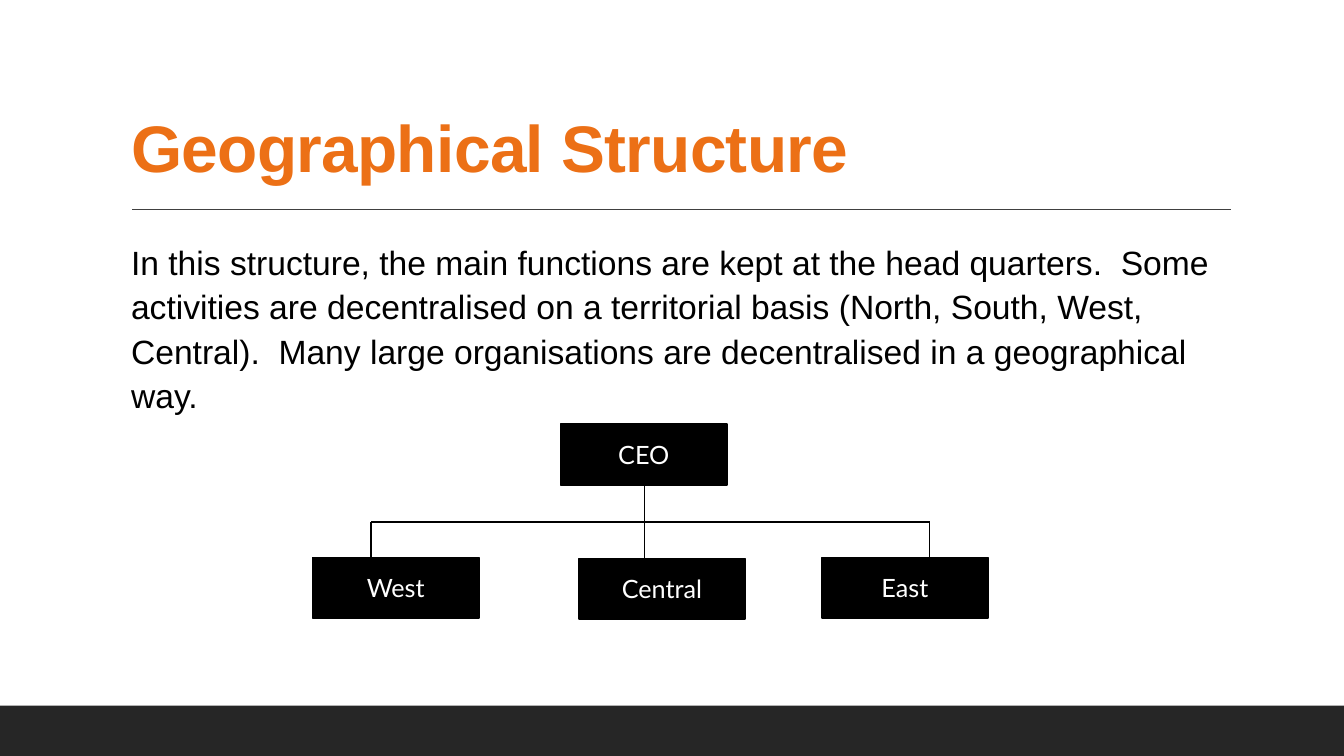
from lxml import etree
from pptx import Presentation
from pptx.dml.color import RGBColor
from pptx.enum.shapes import MSO_CONNECTOR, MSO_SHAPE
from pptx.enum.text import MSO_ANCHOR, MSO_AUTO_SIZE, PP_ALIGN
from pptx.oxml.ns import qn
from pptx.util import Inches, Pt

RECTANGLE = MSO_SHAPE.RECTANGLE
STRAIGHT = MSO_CONNECTOR.STRAIGHT
LEFT, CENTER = PP_ALIGN.LEFT, PP_ALIGN.CENTER
TOP, MIDDLE, BOTTOM = MSO_ANCHOR.TOP, MSO_ANCHOR.MIDDLE, MSO_ANCHOR.BOTTOM
NO_AUTOFIT = MSO_AUTO_SIZE.NONE

COLORS = {
    "accent": "EC7016",
    "text": "000000",
    "box": "000000",
    "label": "FFFFFF",
    "rule": "404040",
    "footer": "262626",
}
HEADING_FONT, LABEL_FONT = "Arial", "Lato"
COLUMNS, ROWS = 133.3, 75


class SlideBuilder:
    def __init__(self, presentation):
        self.column = presentation.slide_width / COLUMNS
        self.row = presentation.slide_height / ROWS
        self.slide = presentation.slides.add_slide(presentation.slide_layouts[1])

    def point(self, column, row):
        return round(column * self.column), round(row * self.row)

    def color(self, name):
        return RGBColor.from_string(COLORS[name])

    def place(self, shape, column, row, width, height):
        shape.left, shape.top = self.point(column, row)
        shape.width, shape.height = self.point(width, height)

    def set_text(self, shape, text, font, size, color, anchor, align, bold=False):
        frame = shape.text_frame
        frame.word_wrap = True
        frame.auto_size = NO_AUTOFIT
        frame.vertical_anchor = anchor
        paragraph = frame.paragraphs[0]
        paragraph.alignment = align
        run = paragraph.add_run()
        run.text = text
        run.font.name = font
        run.font.size = Pt(size)
        run.font.bold = bold
        run.font.color.rgb = self.color(color)
        return paragraph

    def title(self, text, *area):
        shape = self.slide.shapes.title
        self.place(shape, *area)
        paragraph = self.set_text(shape, text, HEADING_FONT, 47, "accent", BOTTOM, LEFT, True)
        paragraph.line_spacing = 0.9
        paragraph.runs[0].font._element.set("spc", "-50")

    def body(self, text, *area):
        shape = self.slide.placeholders[1]
        self.place(shape, *area)
        shape.text_frame.margin_left = shape.text_frame.margin_right = 0
        paragraph = self.set_text(shape, text, HEADING_FONT, 24, "text", TOP, LEFT)
        paragraph.line_spacing = 1.1
        paragraph.space_before, paragraph.space_after = Pt(12), Pt(2)
        properties = paragraph._p.get_or_add_pPr()
        properties.set("marL", str(Inches(0.1)))
        properties.set("indent", "0")
        etree.SubElement(properties, qn("a:buNone"))

    def rectangle(self, color, column, row, width, height):
        shape = self.slide.shapes.add_shape(
            RECTANGLE, *self.point(column, row), *self.point(width, height)
        )
        shape.shadow.inherit = False
        shape.fill.solid()
        shape.fill.fore_color.rgb = self.color(color)
        shape.line.fill.background()
        return shape

    def box(self, text, column, row):
        shape = self.rectangle("box", column, row, 16.5, 6)
        shape.line.color.rgb = self.color("box")
        shape.line.width = Pt(1.25)
        self.set_text(shape, text, LABEL_FONT, 18, "label", MIDDLE, CENTER)

    def line(self, color, start, end):
        connector = self.slide.shapes.add_connector(
            STRAIGHT, *self.point(*start), *self.point(*end)
        )
        connector.line.color.rgb = self.color(color)
        connector.line.width = Pt(1)
        etree.SubElement(connector._element.spPr, qn("a:effectLst"))


def main():
    presentation = Presentation()
    presentation.slide_width = Inches(13.33)
    presentation.slide_height = Inches(7.5)
    builder = SlideBuilder(presentation)

    builder.rectangle("footer", 0, 70, COLUMNS, 5)
    builder.line("rule", (13.1, 20.8), (122.1, 20.8))
    builder.title("Geographical Structure", 12, 3.1, 110, 15.9)
    builder.body(
        "In this structure, the main functions are kept at the head quarters.  "
        "Some activities are decentralised on a territorial basis (North, South, "
        "West, Central).  Many large organisations are decentralised in a "
        "geographical way.",
        12, 23.1, 110, 41.1,
    )

    trunk, branch_row = 63.9, 51.8
    builder.box("CEO", 55.6, 42.1)
    builder.line("box", (trunk, 48.1), (trunk, branch_row))
    builder.line("box", (36.8, branch_row), (92.2, branch_row))
    regions = [
        ("West", 31, 55.3, 36.8),
        ("Central", 57.4, 55.4, trunk),
        ("East", 81.5, 55.3, 92.2),
    ]
    for name, column, row, branch in regions:
        builder.line("box", (branch, branch_row), (branch, row))
        builder.box(name, column, row)

    presentation.save("out.pptx")


if __name__ == "__main__":
    main()
